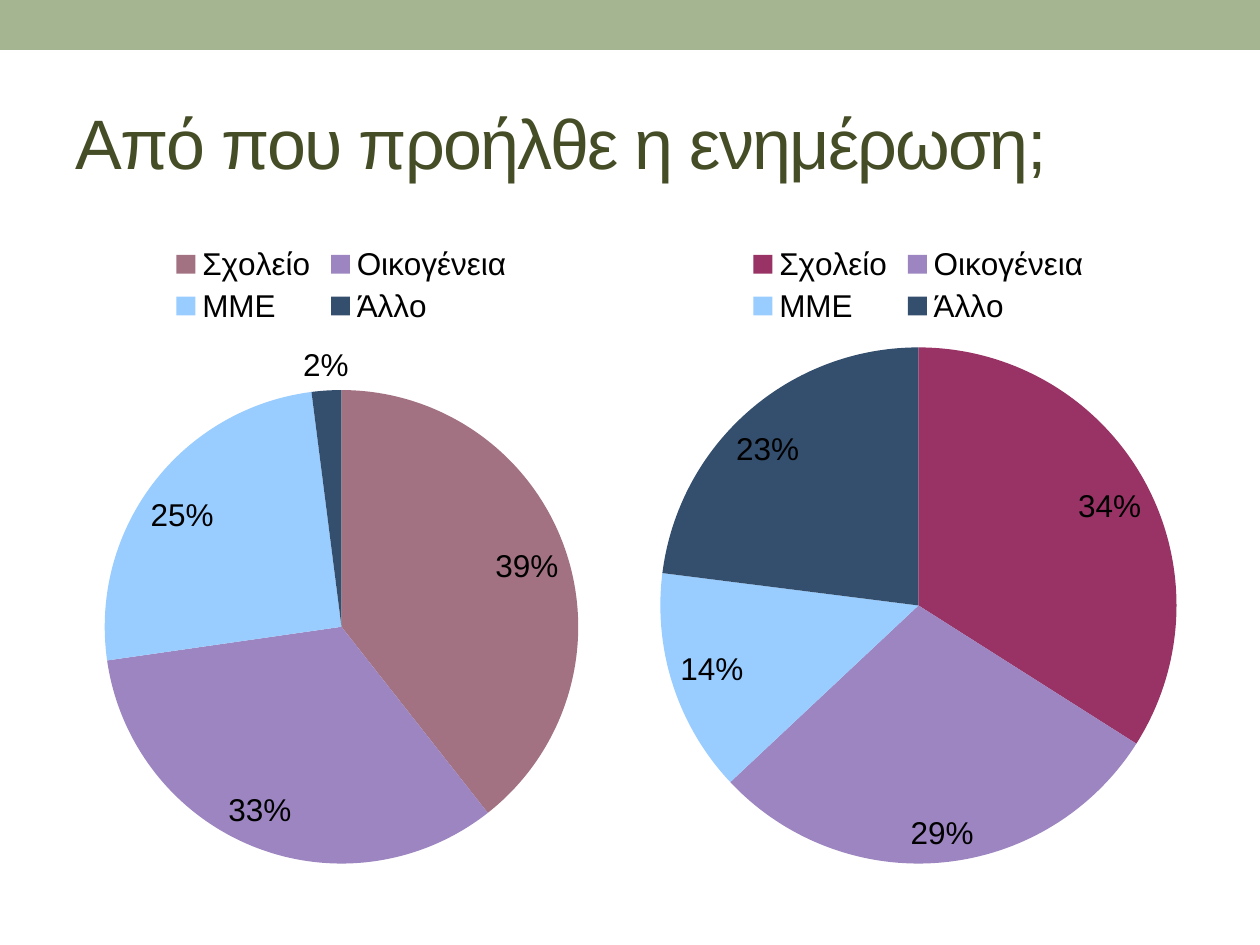
from dataclasses import dataclass

from pptx import Presentation
from pptx.chart.data import CategoryChartData
from pptx.dml.color import RGBColor
from pptx.enum.chart import XL_CHART_TYPE, XL_LABEL_POSITION, XL_LEGEND_POSITION
from pptx.enum.shapes import MSO_SHAPE
from pptx.enum.text import MSO_ANCHOR
from pptx.util import Pt

PIE = XL_CHART_TYPE.PIE
BEST_FIT = XL_LABEL_POSITION.BEST_FIT
LEGEND_TOP = XL_LEGEND_POSITION.TOP
RECT = MSO_SHAPE.RECTANGLE
MIDDLE = MSO_ANCHOR.MIDDLE

EMU_PER_PX = 914400 // 126
SLIDE_W, SLIDE_H = 1260, 945
MARGIN = 63


@dataclass(frozen=True)
class Theme:
    font: str = "Arial"
    title_size: int = 40
    chart_size: int = 18
    band: str = "A5B592"
    title: str = "444D26"
    text: str = "000000"
    rose: str = "A37282"
    plum: str = "993366"
    others: tuple = ("9C85C0", "99CCFF", "344E6D")


THEME = Theme()
SOURCES = ("Σχολείο", "Οικογένεια", "ΜΜΕ", "Άλλο")


def px(*lengths):
    return [n * EMU_PER_PX for n in lengths]


def set_font(font, size, color):
    font.name = THEME.font
    font.size = Pt(size)
    font.color.rgb = RGBColor.from_string(color)


def set_fill(fill, color):
    fill.solid()
    fill.fore_color.rgb = RGBColor.from_string(color)


def add_band(s, box):
    band = s.shapes.add_shape(RECT, *px(*box))
    band.shadow.inherit = False
    set_fill(band.fill, THEME.band)
    band.line.fill.background()


def add_title(s, box, text):
    tf = s.shapes.add_textbox(*px(*box)).text_frame
    tf.word_wrap = True
    tf.vertical_anchor = MIDDLE
    p = tf.paragraphs[0]
    r = p.add_run()
    r.text = text
    set_font(p.font, THEME.title_size, THEME.title)
    # Tighten the letters by one point
    r._r.get_or_add_rPr().set("spc", "-100")


def add_pie(s, box, values, first_color):
    data = CategoryChartData()
    data.categories = SOURCES
    data.add_series("Series 1", values)
    chart = s.shapes.add_chart(PIE, *px(*box), data).chart
    set_font(chart.font, THEME.chart_size, THEME.text)
    chart.has_title = False
    chart.has_legend = True
    chart.legend.position = LEGEND_TOP
    chart.legend.include_in_layout = False

    # Slices
    plot = chart.plots[0]
    plot.vary_by_categories = True
    for i, color in enumerate((first_color, *THEME.others)):
        fmt = plot.series[0].points[i].format
        set_fill(fmt.fill, color)
        fmt.line.fill.background()

    # Percentages
    labels = plot.series[0].data_labels
    labels.show_percentage = True
    labels.show_value = False
    labels.number_format = "0%"
    labels.number_format_is_linked = False
    labels.position = BEST_FIT
    set_font(labels.font, THEME.chart_size, THEME.text)


def main():
    prs = Presentation()
    prs.slide_width, prs.slide_height = px(SLIDE_W, SLIDE_H)
    s = prs.slides.add_slide(prs.slide_layouts[6])

    # Header
    add_band(s, (0, 0, SLIDE_W, 50))
    add_title(s, (MARGIN, 73, SLIDE_W - 2 * MARGIN, 136),
              "Από που προήλθε η ενημέρωση;")

    # Two pies, one at each margin
    top, width, height = 231, 557, 650
    add_pie(s, (MARGIN, top, width, height), (39, 33, 25, 2), THEME.rose)
    add_pie(s, (SLIDE_W - MARGIN - width, top, width, height),
            (34, 29, 14, 23), THEME.plum)

    prs.save("out.pptx")


if __name__ == "__main__":
    main()
